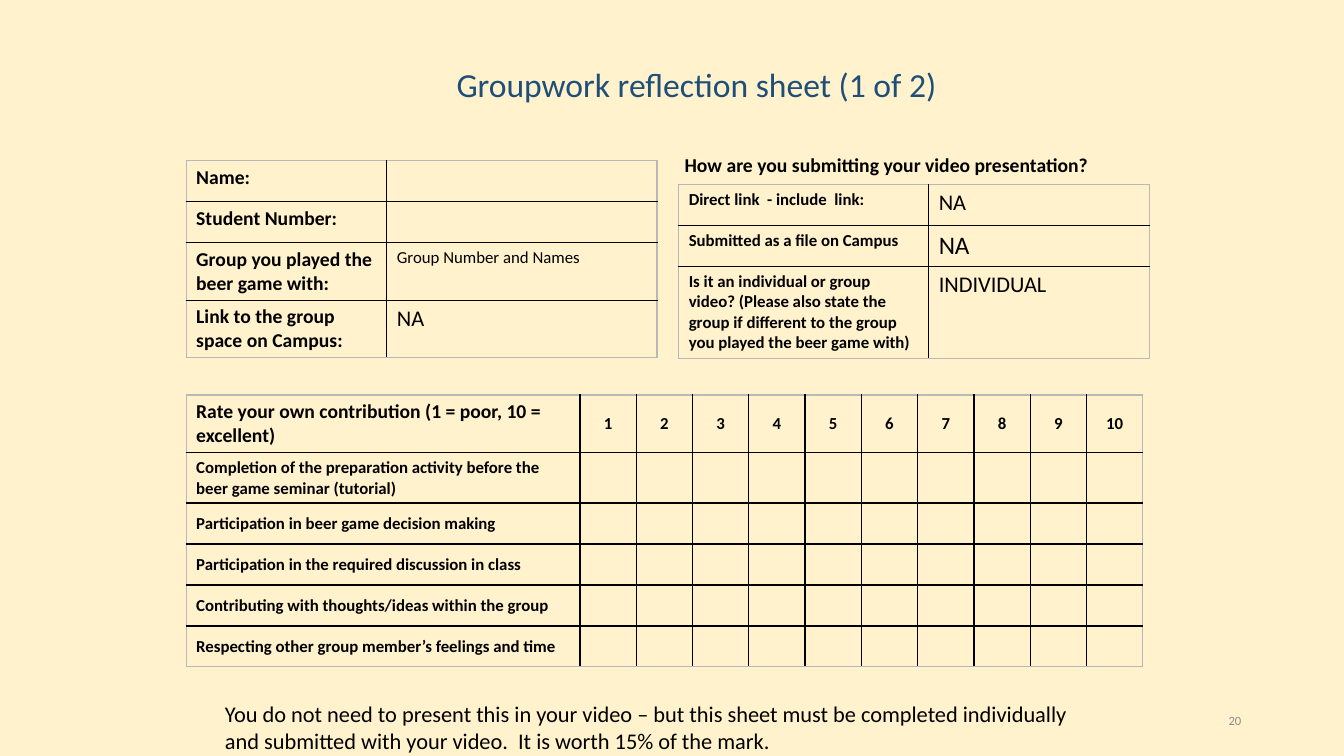
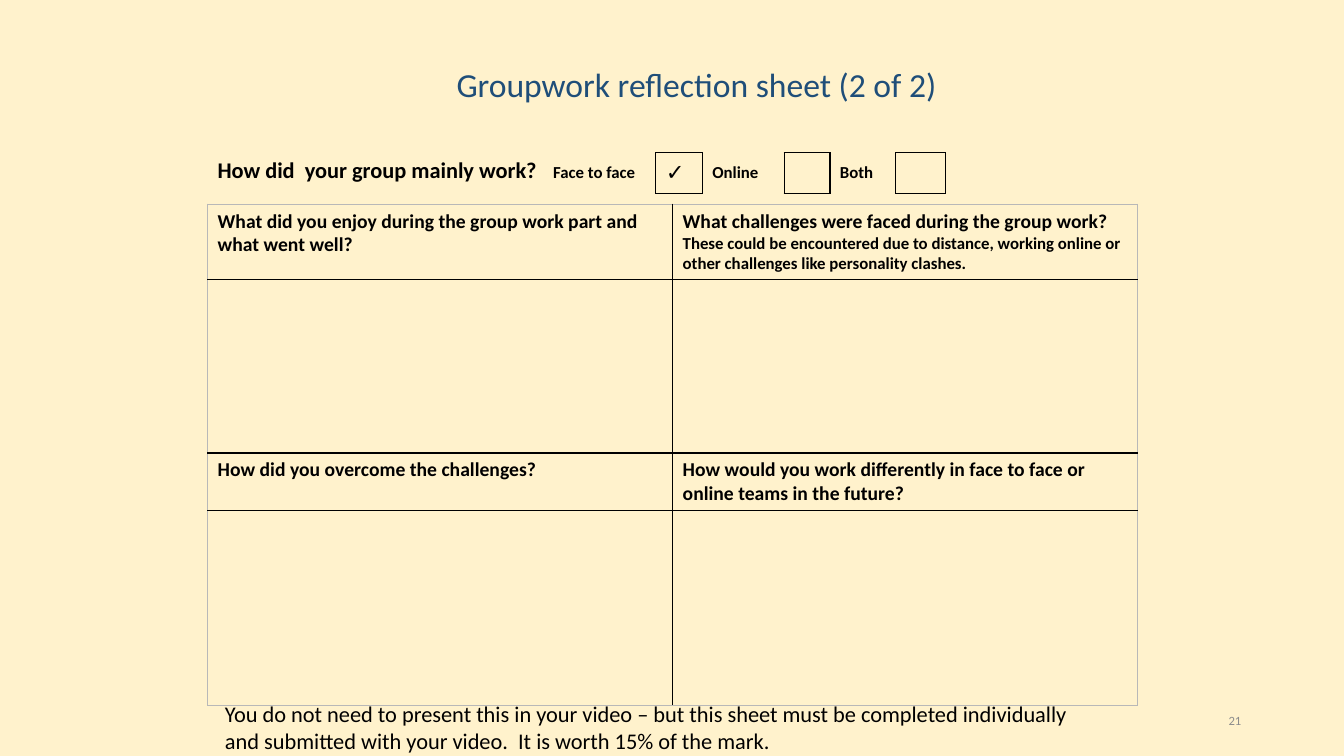
from pptx import Presentation
from pptx.dml.color import RGBColor
from pptx.enum.text import MSO_ANCHOR, PP_ALIGN
from pptx.oxml.ns import qn
from pptx.util import Inches, Pt
from lxml.etree import SubElement

CREAM = RGBColor(0xFF, 0xF2, 0xCC)
NAVY = RGBColor(0x1F, 0x4E, 0x79)
BLACK = RGBColor(0x00, 0x00, 0x00)
GREY = RGBColor(0x8C, 0x8C, 0x8C)
EDGE = RGBColor(0xB8, 0xB8, 0xB8)
FONT = "Calibri"

deck = Presentation()
deck.slide_width, deck.slide_height = Inches(13.33), Inches(7.5)
# One hundredth of the slide's width and height
COLUMN, ROW = deck.slide_width / 100, deck.slide_height / 100
LINE, TWO_LINES = 5.42, 7.62  # table row heights, in ROWs


def write(frame, text, size, bold=False, color=BLACK, align=PP_ALIGN.LEFT):
    """Fill a frame with one paragraph in the deck's font."""
    frame.word_wrap = True
    para = frame.paragraphs[0]
    para.add_run().text = text
    para.alignment = align
    para.font.name, para.font.size = FONT, Pt(size)
    para.font.bold, para.font.color.rgb = bold, color
    return para


def add_grid(page, left, top, widths, heights, cells, size=14,
             anchor=MSO_ANCHOR.TOP, boxed_columns=None):
    """Add a ruled table; a cell is a text or (text, size, bold, align).

    With boxed_columns, only those columns are outlined.
    """
    table = page.shapes.add_table(
        len(heights), len(widths), int(left * COLUMN), int(top * ROW),
        int(sum(widths) * COLUMN), int(sum(heights) * ROW)).table
    table.first_row = table.horz_banding = False
    for column, width in zip(table.columns, widths):
        column.width = int(width * COLUMN)
    for row, height in zip(table.rows, heights):
        row.height = int(height * ROW)
    last_row, last_column = len(heights) - 1, len(widths) - 1
    for r, row in enumerate(table.rows):
        for c, cell in enumerate(row.cells):
            outer = {"lnL": c == 0, "lnR": c == last_column,
                     "lnT": r == 0, "lnB": r == last_row}
            for side, at_edge in outer.items():
                line = SubElement(cell._tc.get_or_add_tcPr(), qn(f"a:{side}"), w=str(Pt(1)))
                color = EDGE if at_edge else BLACK
                if boxed_columns:
                    color = BLACK if c in boxed_columns or not at_edge else None
                if color is None:
                    SubElement(line, qn("a:noFill"))
                else:
                    fill = SubElement(line, qn("a:solidFill"))
                    SubElement(fill, qn("a:srgbClr"), val=str(color))
            cell.fill.background()
            cell.vertical_anchor = anchor
            content = cells[r][c] if c < len(cells[r]) else ""
            if isinstance(content, str):
                content = (content, size, True)
            if content[0]:
                text, points, bold, *align = content
                write(cell.text_frame, text, points, bold, BLACK, *align)
    return table


# Shared parts: background, title, page number and closing note
NOTE = ("You do not need to present this in your video – but this sheet must be "
        "completed individually and submitted with your video.  It is worth 15% of the mark.")
pages = []
for part, number in ((1, "20"), (2, "21")):
    page = deck.slides.add_slide(deck.slide_layouts[6])
    page.background.fill.solid()
    page.background.fill.fore_color.rgb = CREAM
    pages.append(page)
    for left, top, width, height, text, size, color, align, anchor, spacing in (
            (33.23, 4.5, 41.8, 14, f"Groupwork reflection sheet ({part} of 2)", 24, NAVY,
             PP_ALIGN.LEFT, MSO_ANCHOR.MIDDLE, 0.9),
            (70.6, 92.7, 22.5, 5.3, number, 9, GREY,
             PP_ALIGN.RIGHT, MSO_ANCHOR.MIDDLE, 1.0),
            (16, 92, 66.9, 8.5, NOTE, 16, BLACK,
             PP_ALIGN.LEFT, MSO_ANCHOR.TOP, 1.0)):
        box = page.shapes.add_textbox(int(left * COLUMN), int(top * ROW),
                                      int(width * COLUMN), int(height * ROW))
        box.text_frame.vertical_anchor = anchor
        para = write(box.text_frame, text, size, False, color, align)
        para.line_spacing = spacing

# Headings beside the tables
for page, left, top, width, height, text, size in (
        (pages[0], 50.2, 19.6, 35.3, 4.5,
         "How are you submitting your video presentation?", 14),
        (pages[1], 15.45, 20, 25.8, 4.9, "How did  your group mainly work?", 16)):
    box = page.shapes.add_textbox(int(left * COLUMN), int(top * ROW),
                                  int(width * COLUMN), int(height * ROW))
    write(box.text_frame, text, size, True)

# Page 1: student details
add_grid(pages[0], 13.85, 21.25, (14.93, 20.1), (LINE, LINE, TWO_LINES, TWO_LINES), [
    ["Name:"],
    ["Student Number:"],
    ["Group you played the beer game with:", ("Group Number and Names", 12, False)],
    ["Link to the group space on Campus:", ("NA", 16, False)],
])

# Page 1: video submission
add_grid(pages[0], 50.5, 24.4, (18.6, 16.45), (LINE, LINE, 12.2), [
    ["Direct link  - include  link:", ("NA", 16, False)],
    ["Submitted as a file on Campus", ("NA", 18, False)],
    ["Is it an individual or group video? (Please also state the group if different "
     "to the group you played the beer game with)", ("INDIVIDUAL", 16, False)],
], size=12)

# Page 1: own contribution, rated 1 to 10
scores = [(str(score), 12, True, PP_ALIGN.CENTER) for score in range(1, 11)]
add_grid(pages[0], 13.85, 52.25, [29.3] + [4.19] * 10, [TWO_LINES, 6.6] + [LINE] * 4, [
    [("Rate your own contribution (1 = poor, 10 = excellent)", 14, True)] + scores,
    ["Completion of the preparation activity before the beer game seminar (tutorial)"],
    ["Participation in beer game decision making"],
    ["Participation in the required discussion in class"],
    ["Contributing with thoughts/ideas within the group"],
    ["Respecting other group member’s feelings and time"],
], size=12, anchor=MSO_ANCHOR.MIDDLE)

# Page 2: reflection questions with room for answers
questions = add_grid(pages[1], 15.45, 27.03, (34.6, 34.6), (9.9, 23, TWO_LINES, 25.8), [
    ["What did you enjoy during the group work part and what went well?",
     "What challenges were faced during the group work? "],
    [],
    ["How did you overcome the challenges?",
     "How would you work differently in face to face or online teams in the future?"],
    [],
])
span = questions.cell(0, 1).text_frame.paragraphs[0].add_run()
span.text = ("These could be encountered due to distance, working online or "
             "other challenges like personality clashes.")
span.font.size = Pt(12)

# Page 2: way of working, with tick boxes
add_grid(pages[1], 40.4, 20.2, (8.4, 3.45, 6.1, 3.4, 4.9, 3.7), [LINE],
         [["Face to face", ("✓", 16, True), "Online", "", "Both"]],
         size=12, anchor=MSO_ANCHOR.MIDDLE, boxed_columns=(1, 3, 5))

deck.save("out.pptx")
